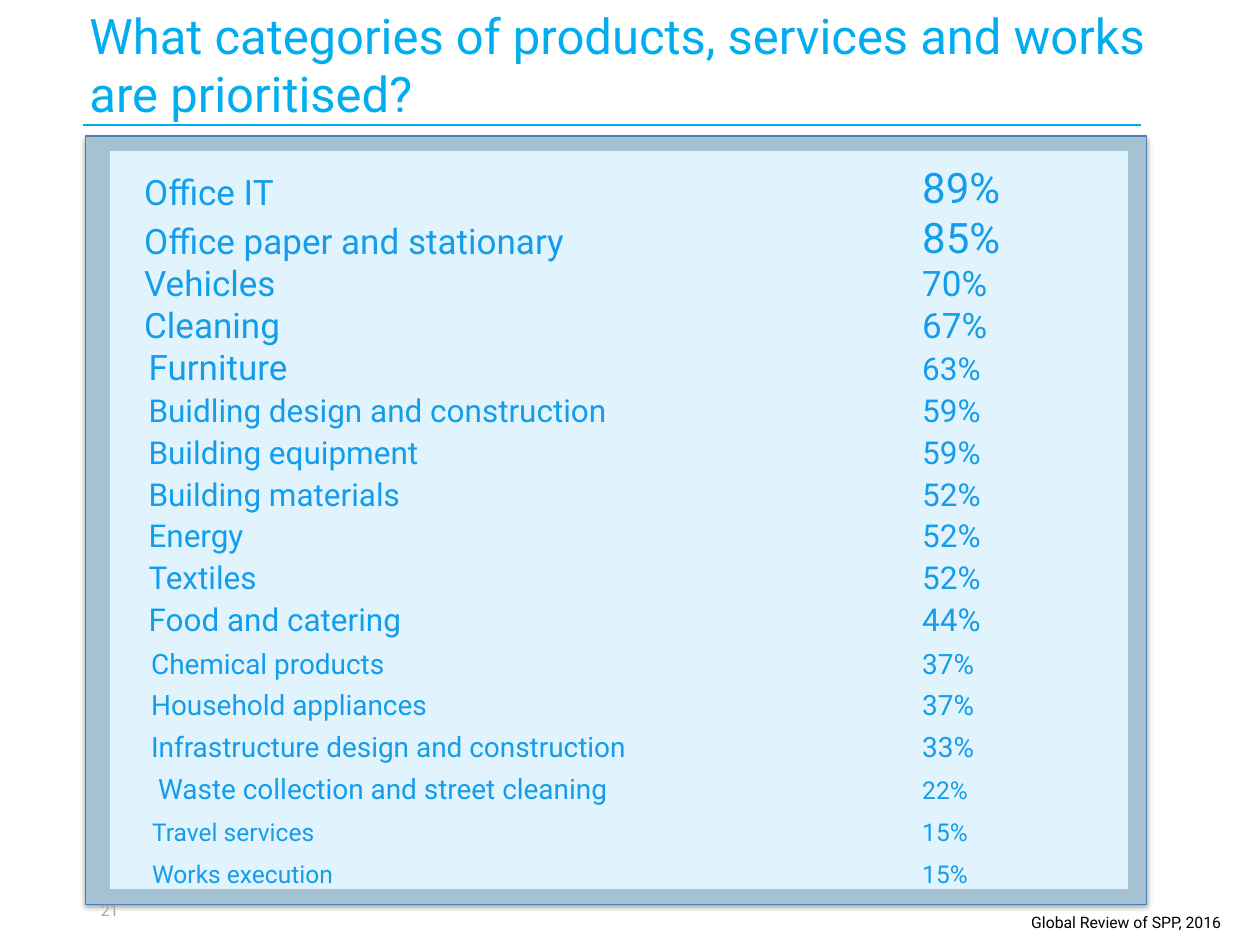
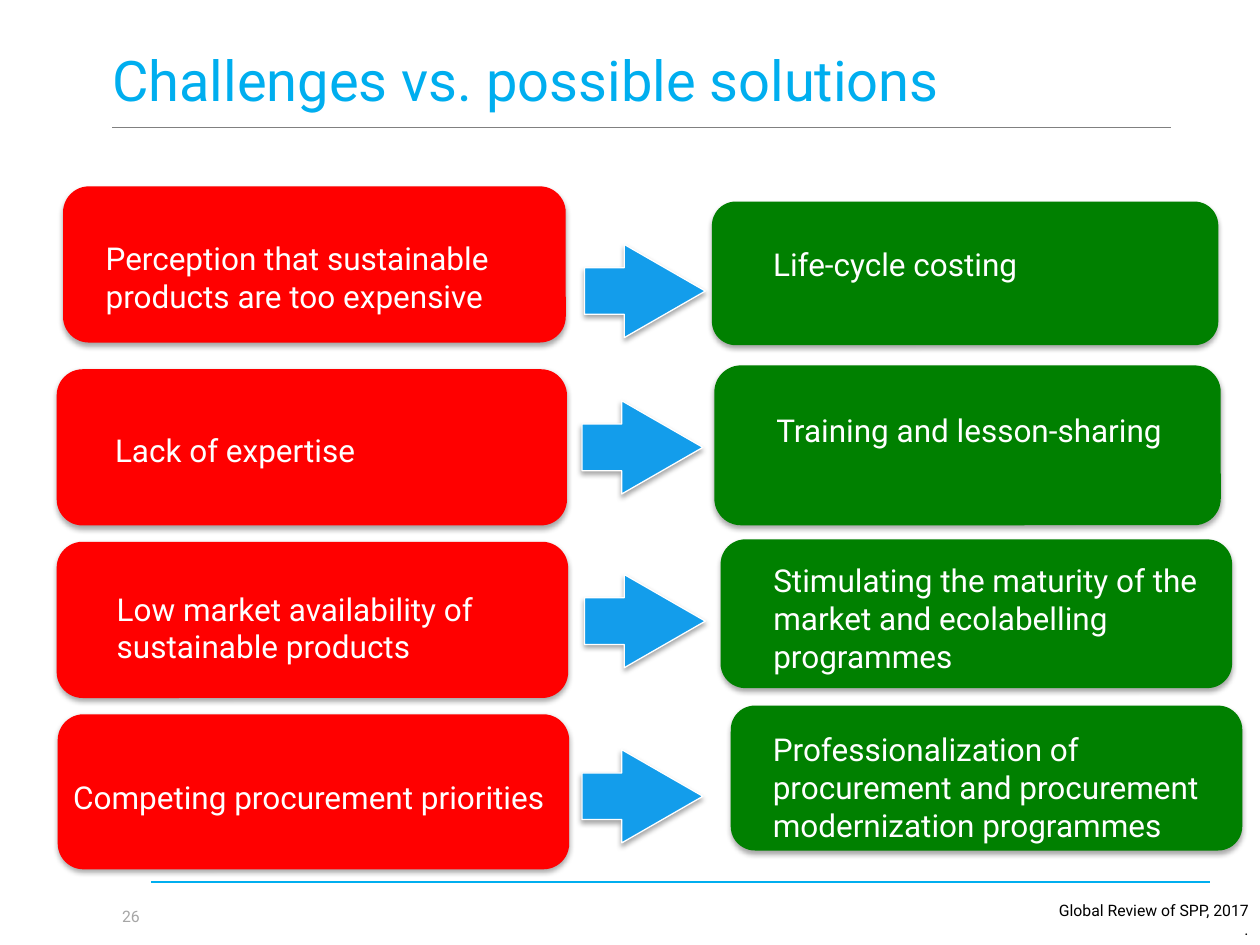
import dataclasses

import lxml.etree
import pptx
import pptx.dml.color
import pptx.enum.shapes
import pptx.enum.text
import pptx.oxml
import pptx.oxml.ns
import pptx.util

Pt = pptx.util.Pt
qn = pptx.oxml.ns.qn
ALIGN = pptx.enum.text.PP_ALIGN
ANCHOR = pptx.enum.text.MSO_ANCHOR
SHAPE = pptx.enum.shapes.MSO_SHAPE


@dataclasses.dataclass(frozen=True)
class Theme:
    font: str = "Roboto"
    cyan: str = "00AEEF"
    blue: str = "139DEB"
    pale: str = "E1F4FD"
    steel: str = "A4C2D2"
    edge: str = "4B7EBC"
    red: str = "FF0000"
    green: str = "008000"
    white: str = "FFFFFF"
    black: str = "000000"
    gray: str = "A6A6A6"
    rule: str = "808080"
    note: int = 9
    card: int = 18


THEME = Theme()
PLAIN_TABLE = "{2D5ABB26-0587-4C30-8999-92F81FD0307C}"
SHADOW = (
    '<a:outerShdw xmlns:a="http://schemas.openxmlformats.org/drawingml/2006/main"'
    ' blurRad="39370" dist="22860" dir="5400000" rotWithShape="0">'
    '<a:srgbClr val="000000"><a:alpha val="35000"/></a:srgbClr></a:outerShdw>'
)

# Category, size, indent, share, size of share
GOODS = [
    ("Office IT", 20, 19.8, "89%", 24),
    ("Office paper and stationary", 20, 19.8, "85%", 24),
    ("Vehicles", 20, 19.8, "70%", 20),
    ("Cleaning", 20, 19.8, "67%", 20),
    ("Furniture", 20, 22.3, "63%", 18),
    ("Buidling design and construction", 18, 22.3, "59%", 18),
    ("Building equipment", 18, 22.3, "59%", 18),
    ("Building materials", 18, 22.3, "52%", 18),
    ("Energy", 18, 22.3, "52%", 18),
    ("Textiles", 18, 22.3, "52%", 18),
    ("Food and catering", 18, 22.3, "44%", 18),
    ("Chemical products", 16, 23.8, "37%", 16),
    ("Household appliances", 16, 23.8, "37%", 16),
    ("Infrastructure design and construction", 16, 23.8, "33%", 16),
    ("Waste collection and street cleaning", 16, 27.8, "22%", 14),
    ("Travel services", 14, 24.3, "15%", 14),
    ("Works execution", 14, 24.3, "15%", 14),
]

# Text, card (left, top, width, height), text inset (left, top)
ISSUES = [
    ("Perception that sustainable\nproducts are too expensive", (36, 106.5, 287.3, 89.3), (20, 26)),
    ("Lack of expertise", (32.4, 211, 291.6, 89.3), (29, 31)),
    ("Low market availability of sustainable products", (32.4, 309.6, 292.3, 89.3), (30, 23)),
    ("Competing procurement priorities", (33, 408.2, 292.3, 88.6), (4.5, 32)),
]
REMEDIES = [
    ("Life-cycle costing", (406.8, 115.2, 289.4, 82.1), (31, 21)),
    ("Training and lesson-sharing", (408.2, 208.8, 289.4, 91.4), (31, 21.5)),
    ("Stimulating the maturity of the market and ecolabelling programmes",
     (411.8, 308.2, 292.3, 85), (26, 8.5)),
    ("Professionalization of procurement and procurement modernization programmes",
     (417.6, 403.2, 292.3, 82.8), (20, 10)),
]
ARROWS = [(334, 139.7), (332.6, 229), (334, 328.3), (332.6, 428.4)]


def tint(code):
    return pptx.dml.color.RGBColor.from_string(code)


def points(place):
    return [Pt(value) for value in place]


def write(frame, text, size, color, align=ALIGN.LEFT, anchor=ANCHOR.TOP, inset=(0, 0)):
    """Fill a text frame, one paragraph a line, with a left and top inset."""
    frame.word_wrap = True
    frame.auto_size = pptx.enum.text.MSO_AUTO_SIZE.NONE
    frame.vertical_anchor = anchor
    frame.margin_left, frame.margin_top = points(inset)
    frame.margin_right = frame.margin_bottom = 0
    fill_lines(frame, text, size, color, align)


def fill_lines(frame, text, size, color, align=ALIGN.LEFT):
    for index, line in enumerate(text.split("\n")):
        para = frame.paragraphs[0] if index == 0 else frame.add_paragraph()
        para.alignment = align
        run = para.add_run()
        run.text = line
        run.font.name = THEME.font
        run.font.size = Pt(size)
        run.font.bold = False
        run.font.color.rgb = tint(color)


def add_title(slide, text, size, place):
    title = slide.shapes.title
    title.left, title.top, title.width, title.height = points(place)
    write(title.text_frame, text, size, THEME.cyan)


def add_label(slide, text, color, place, align=ALIGN.LEFT):
    box = slide.shapes.add_textbox(*points(place))
    write(box.text_frame, text, THEME.note, color, align, ANCHOR.MIDDLE)


def add_rule(slide, left, top, color=THEME.cyan, weight=1):
    rule = slide.shapes.add_connector(
        pptx.enum.shapes.MSO_CONNECTOR.STRAIGHT, *points((left, top, left + 604.8, top)))
    rule.line.color.rgb = tint(color)
    rule.line.width = Pt(weight)
    lxml.etree.SubElement(rule.element.spPr, qn("a:effectLst"))


def add_block(slide, kind, place, fill, edge=None):
    """Add a filled shape with a soft shadow below it."""
    block = slide.shapes.add_shape(kind, *points(place))
    block.fill.solid()
    block.fill.fore_color.rgb = tint(fill)
    if edge:
        block.line.color.rgb = tint(edge)
        block.line.width = Pt(0.75)
    else:
        block.line.fill.background()
    block.shadow.inherit = False
    effects = block.element.spPr.find(qn("a:effectLst"))
    effects.append(lxml.etree.fromstring(SHADOW))
    return block


def add_card(slide, text, place, inset, fill):
    card = add_block(slide, SHAPE.ROUNDED_RECTANGLE, place, fill)
    write(card.text_frame, text, THEME.card, THEME.white, inset=inset)


def add_arrow(slide, left, top):
    arrow = add_block(slide, SHAPE.RIGHT_ARROW, (left, top, 69.1, 53.3), THEME.blue, THEME.white)
    arrow.adjustments[0] = 0.5
    arrow.adjustments[1] = 0.87


def fill_cell(cell, text, size, indent=0):
    cell.fill.solid()
    cell.fill.fore_color.rgb = tint(THEME.pale)
    cell.vertical_anchor = ANCHOR.BOTTOM
    cell.margin_left = Pt(indent)
    cell.margin_top = cell.margin_right = cell.margin_bottom = 0
    fill_lines(cell.text_frame, text, size, THEME.blue)


def add_goods(slide):
    frame = slide.shapes.add_table(len(GOODS), 2, *points((62.6, 86.4, 581.8, 422)))
    frame.element.find(".//" + qn("a:tableStyleId")).text = PLAIN_TABLE
    table = frame.table
    table.first_row = table.horz_banding = False
    table.columns[0].width, table.columns[1].width = points((464.4, 117.4))
    heights = [36, 28.1] + [23.85] * (len(GOODS) - 2)
    for index, (name, size, indent, share, big) in enumerate(GOODS):
        table.rows[index].height = Pt(heights[index])
        fill_cell(table.cell(index, 0), name, size, indent)
        fill_cell(table.cell(index, 1), share, big)


def build_goods(slide):
    add_title(slide, "What categories of products, services and works are prioritised?",
              28, (51.1, 2.9, 604.8, 68))
    add_block(slide, SHAPE.RECTANGLE, (49, 77.8, 606.2, 439.2), THEME.steel, THEME.edge)
    add_label(slide, "Global Review of SPP, 2016", THEME.black,
              (424.1, 515, 273.6, 24), ALIGN.RIGHT)
    add_label(slide, "21", THEME.gray, (57.6, 506, 200, 28))
    add_rule(slide, 47.5, 71.3)
    add_goods(slide)


def build_issues(slide):
    add_title(slide, "Challenges vs. possible solutions", 32, (64.1, 25.9, 620.6, 44))
    add_label(slide, "Global Review of SPP, 2017\n.", THEME.black,
              (439.9, 511.2, 273.6, 28.8), ALIGN.RIGHT)
    add_label(slide, "26", THEME.gray, (69.8, 509.5, 200, 28))
    add_rule(slide, 64.1, 72.7, THEME.rule, 0.5)
    add_rule(slide, 86.4, 504)
    for cards, fill in ((ISSUES, THEME.red), (REMEDIES, THEME.green)):
        for text, place, inset in cards:
            add_card(slide, text, place, inset, fill)
    for left, top in ARROWS:
        add_arrow(slide, left, top)


def main():
    deck = pptx.Presentation()
    deck.slide_width, deck.slide_height = points((720, 540))
    for build in (build_goods, build_issues):
        build(deck.slides.add_slide(deck.slide_layouts[5]))
    deck.save("out.pptx")


if __name__ == "__main__":
    main()
